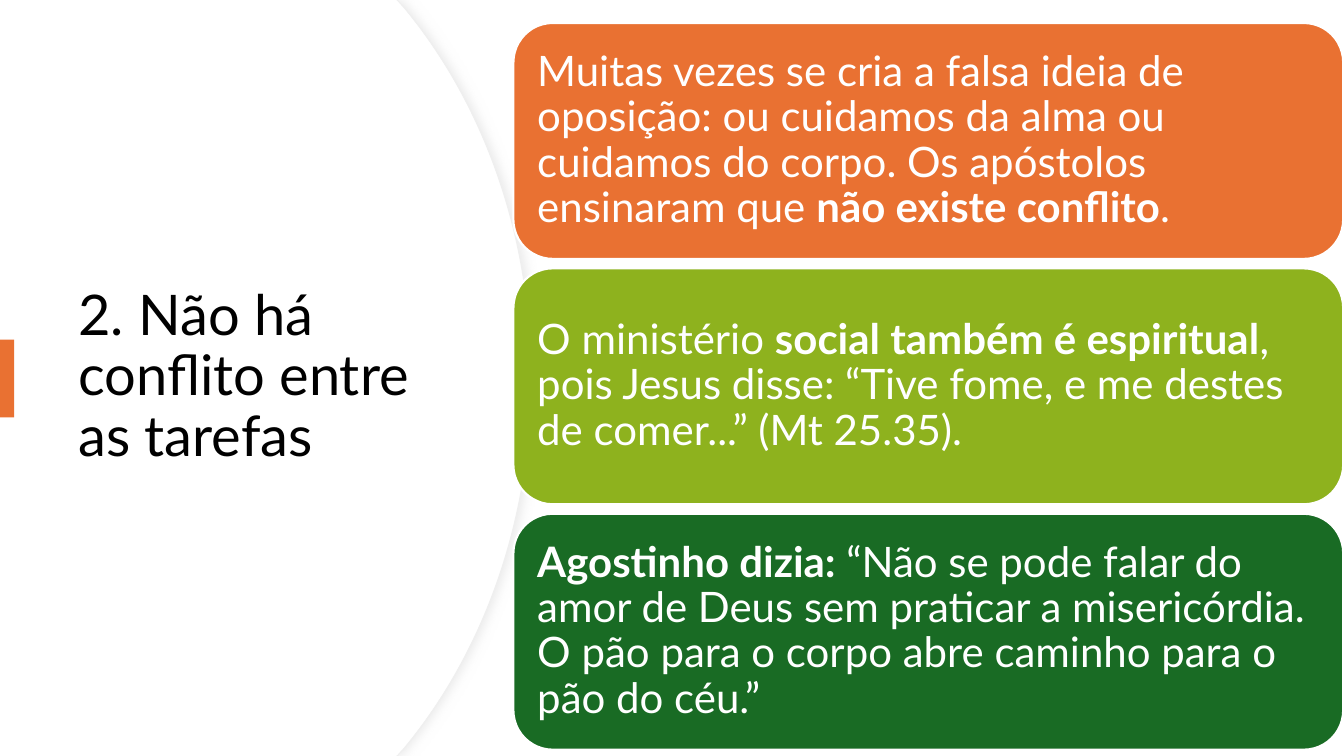
from dataclasses import dataclass

from lxml import etree
from pptx import Presentation
from pptx import util as u
from pptx.dml.color import RGBColor
from pptx.enum import shapes, text
from pptx.oxml import ns


@dataclass(frozen=True)
class Theme:
    """Colours, font and sizes of the slide."""
    font: str = "Lato"
    head: float = 40
    body: float = 30
    ink: str = "000000"
    white: str = "FFFFFF"
    edge: str = "EFEFEF"
    shade: str = "D9D9D9"
    orange: str = "E97132"
    lime: str = "8EB21E"
    green: str = "196B24"


LOOK = Theme()
WIDE, HIGH = 33.87, 19.05
TITLE = "2. Não há conflito entre as tarefas"
CARDS = [
    (LOOK.orange, [
        ("Muitas vezes se cria a falsa ideia de oposição: ou cuidamos da alma "
         "ou cuidamos do corpo. Os apóstolos ensinaram que ", False),
        ("não existe conflito", True),
        (".", False)]),
    (LOOK.lime, [
        ("O ministério ", False),
        ("social também é espiritual", True),
        (", pois Jesus disse: “Tive fome, e me destes de comer...” (Mt 25.35).",
         False)]),
    (LOOK.green, [
        ("Agostinho dizia: ", True),
        ("“Não se pode falar do amor de Deus sem praticar a misericórdia. "
         "O pão para o corpo abre caminho para o pão do céu.”", False)]),
]


def put(item, form):
    """Set each attribute of item from a dict."""
    for name, value in form.items():
        setattr(item, name, value)


def place(item, box):
    """Move item to a box given in centimetres."""
    put(item, dict(zip(("left", "top", "width", "height"), map(u.Cm, box))))


def paint(shape, fill, line=None, weight=0):
    """Give shape a flat fill, an optional line and no shadow."""
    shape.shadow.inherit = False
    shape.fill.solid()
    shape.fill.fore_color.rgb = RGBColor.from_string(fill)
    if line:
        shape.line.color.rgb = RGBColor.from_string(line)
        shape.line.width = u.Pt(weight)
    else:
        shape.line.fill.background()


def write(frame, runs, size, tint, inset):
    """Fill a text frame with one left-aligned paragraph of runs."""
    put(frame, {"word_wrap": True, "auto_size": text.MSO_AUTO_SIZE.NONE,
                "vertical_anchor": text.MSO_ANCHOR.MIDDLE})
    sides = ("left", "top", "right", "bottom")
    put(frame, {f"margin_{side}": u.Cm(inset) for side in sides})
    para = frame.paragraphs[0]
    put(para, {"alignment": text.PP_ALIGN.LEFT, "line_spacing": 0.9})
    for words, bold in runs:
        run = para.add_run()
        run.text = words
        put(run.font, {"name": LOOK.font, "size": u.Pt(size), "bold": bold})
        run.font.color.rgb = RGBColor.from_string(tint)


def bend(shape, first, count):
    """Turn line segments into curves, three points to each curve."""
    lines = shape.element.findall(".//" + ns.qn("a:lnTo"))
    for start in range(first, first + 3 * count, 3):
        trio = lines[start:start + 3]
        arc = etree.Element(ns.qn("a:cubicBezTo"))
        trio[0].addprevious(arc)
        for line in trio:
            arc.append(line[0])
            line.getparent().remove(line)


def panel(slide, box):
    """Draw a panel whose right side bulges to the edge of its box."""
    left, top, width, height = box
    upper = [(width - 3.38, 0), (width - 3.2, 0.2), (width - 1.22, 2.59),
             (width, 5.89), (width, height / 2)]
    lower = [(x, height - y) for x, y in reversed(upper[:-1])]
    dots = [(u.Cm(left + x), u.Cm(top + y))
            for x, y in upper + lower + [(0, height)]]
    form = slide.shapes.build_freeform(u.Cm(left), u.Cm(top))
    form.add_line_segments(dots, close=True)
    shape = form.convert_to_shape()
    bend(shape, 2, 2)
    return shape


def shadow(shape):
    """Add a soft shadow to the right of shape."""
    effects = shape.element.find(".//" + ns.qn("a:effectLst"))
    outer = etree.SubElement(
        effects, ns.qn("a:outerShdw"), blurRad=str(u.Pt(7)),
        dist=str(u.Pt(3)), dir="0", algn="l", rotWithShape="0")
    tone = etree.SubElement(outer, ns.qn("a:srgbClr"), val=LOOK.shade)
    etree.SubElement(tone, ns.qn("a:alpha"), val="50000")


def side(slide, box):
    """Build the title region: curved panel, title and accent tab."""
    left, top, width, height = box
    back = panel(slide, box)
    paint(back, LOOK.white, LOOK.edge, 0.75)
    shadow(back)
    paint(panel(slide, (left, top, width - 0.03, height)), LOOK.white)
    title = slide.shapes.title
    back.element.getparent().append(title.element)
    place(title, (left + 1.73, top + 3.23, 10, 12.57))
    write(title.text_frame, [(TITLE, False)], LOOK.head, LOOK.ink, 0.25)
    tab = slide.shapes.add_shape(shapes.MSO_SHAPE.RECTANGLE, 0, 0, 0, 0)
    place(tab, (left, top + 8.56, 0.36, 1.96))
    paint(tab, LOOK.orange)


def stack(slide, box, gap=0.24):
    """Build the column of equal cards with a gap between them."""
    left, top, width, height = box
    tall = (height - gap * (len(CARDS) - 1)) / len(CARDS)
    for row, (fill, runs) in enumerate(CARDS):
        card = slide.shapes.add_shape(
            shapes.MSO_SHAPE.ROUNDED_RECTANGLE, 0, 0, 0, 0)
        place(card, (left, top + row * (tall + gap), width, tall))
        paint(card, fill, LOOK.white, 1.5)
        write(card.text_frame, runs, LOOK.body, LOOK.white, 0.31)


def main():
    """Build and save the slide."""
    deck = Presentation()
    put(deck, {"slide_width": u.Cm(WIDE), "slide_height": u.Cm(HIGH)})
    slide = deck.slides.add_slide(deck.slide_layouts[5])
    side(slide, (0, 0, 13.39, HIGH))
    stack(slide, (12.94, 0.58, 20.91, 18.31))
    deck.save("out.pptx")


if __name__ == "__main__":
    main()
